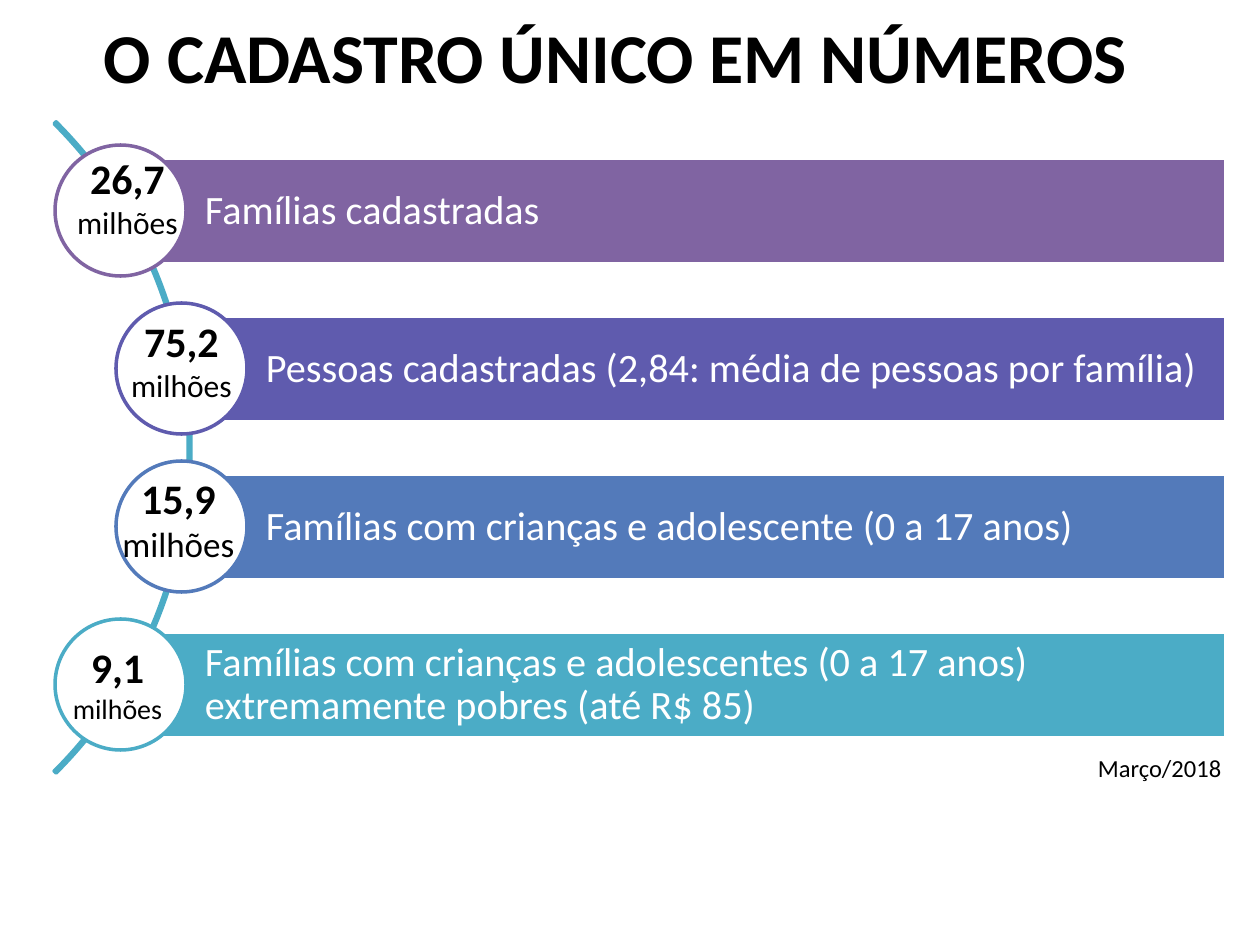
from pptx import Presentation
from pptx.dml.color import RGBColor
from pptx.enum.shapes import MSO_SHAPE
from pptx.enum.text import MSO_ANCHOR, PP_ALIGN
from pptx.util import Pt

PX = 914400 / 126
BAR_RIGHT, BAR_H, CIRCLE, PITCH = 1226, 106, 131, 158


def add_shape(kind, box, fill, line):
    sp = s.shapes.add_shape(kind, *[round(v * PX) for v in box])
    sp.shadow.inherit = False
    if fill:
        sp.fill.solid()
        sp.fill.fore_color.rgb = RGBColor.from_string(fill)
    else:
        sp.fill.background()
    sp.line.color.rgb = RGBColor.from_string(line)
    sp.line.width = Pt(2)
    return sp


def write(box, *lines, color="000000", align=PP_ALIGN.LEFT, anchor=MSO_ANCHOR.TOP,
          insets=(13, 6, 13, 6), spacing=None):
    """Write lines of (text, size, bold) in a new text box at box."""
    tf = s.shapes.add_textbox(*[round(v * PX) for v in box]).text_frame
    tf.word_wrap = True
    tf.vertical_anchor = anchor
    tf.margin_left, tf.margin_top, tf.margin_right, tf.margin_bottom = [
        round(v * PX) for v in insets]
    for i, (text, size, bold) in enumerate(lines):
        p = tf.add_paragraph() if i else tf.paragraphs[0]
        p.alignment = align
        p.line_spacing = spacing
        r = p.add_run()
        r.text = text
        r.font.name = "Calibri"
        r.font.size = Pt(size)
        r.font.bold = bold
        r.font.color.rgb = RGBColor.from_string(color)


prs = Presentation()
prs.slide_width, prs.slide_height = round(1260 * PX), round(945 * PX)
s = prs.slides.add_slide(prs.slide_layouts[6])

write((25, 6, 1181, 100), ("O CADASTRO ÚNICO EM NÚMEROS", 40, True),
      align=PP_ALIGN.CENTER, anchor=MSO_ANCHOR.MIDDLE)

arc = add_shape(MSO_SHAPE.BLOCK_ARC, (-730, -13, 921, 921), None, "4BACC6")
for i, value in enumerate((189, 27, 0.003)):
    arc.adjustments[i] = value

# color, circle left, bar text, figure, unit size, figure box
rows = [
    ("8064A2", 55, "Famílias cadastradas", "26,7", 18, (38, 147, 179, 102)),
    ("5F5BAE", 116, "Pessoas cadastradas (2,84: média de pessoas por família)",
     "75,2", 18, (92, 310, 179, 102)),
    ("537ABA", 116, "Famílias com crianças e adolescente (0 a 17 anos)",
     "15,9", 20, (89, 466, 179, 106)),
    ("4BACC6", 55, "Famílias com crianças e adolescentes (0 a 17 anos) "
     "extremamente pobres (até R$ 85)", "9,1", 16, (6, 635, 223, 97)),
]
for i, (color, left, label, figure, unit_size, figure_box) in enumerate(rows):
    bar_left = left + 67
    bar = (bar_left, 158 + i * PITCH, BAR_RIGHT - bar_left, BAR_H)
    add_shape(MSO_SHAPE.RECTANGLE, bar, color, "FFFFFF")
    write(bar, (label, 23, False), color="FFFFFF", anchor=MSO_ANCHOR.MIDDLE,
          insets=(83, 8, 8, 8), spacing=0.9)
    add_shape(MSO_SHAPE.OVAL, (left, 145 + i * PITCH, CIRCLE, CIRCLE), "FFFFFF", color)
    write(figure_box, (figure, 24, True), ("milhões", unit_size, False),
          align=PP_ALIGN.CENTER)

write((1085, 747, 160, 43), ("Março/2018", 14, False))

prs.save("out.pptx")
